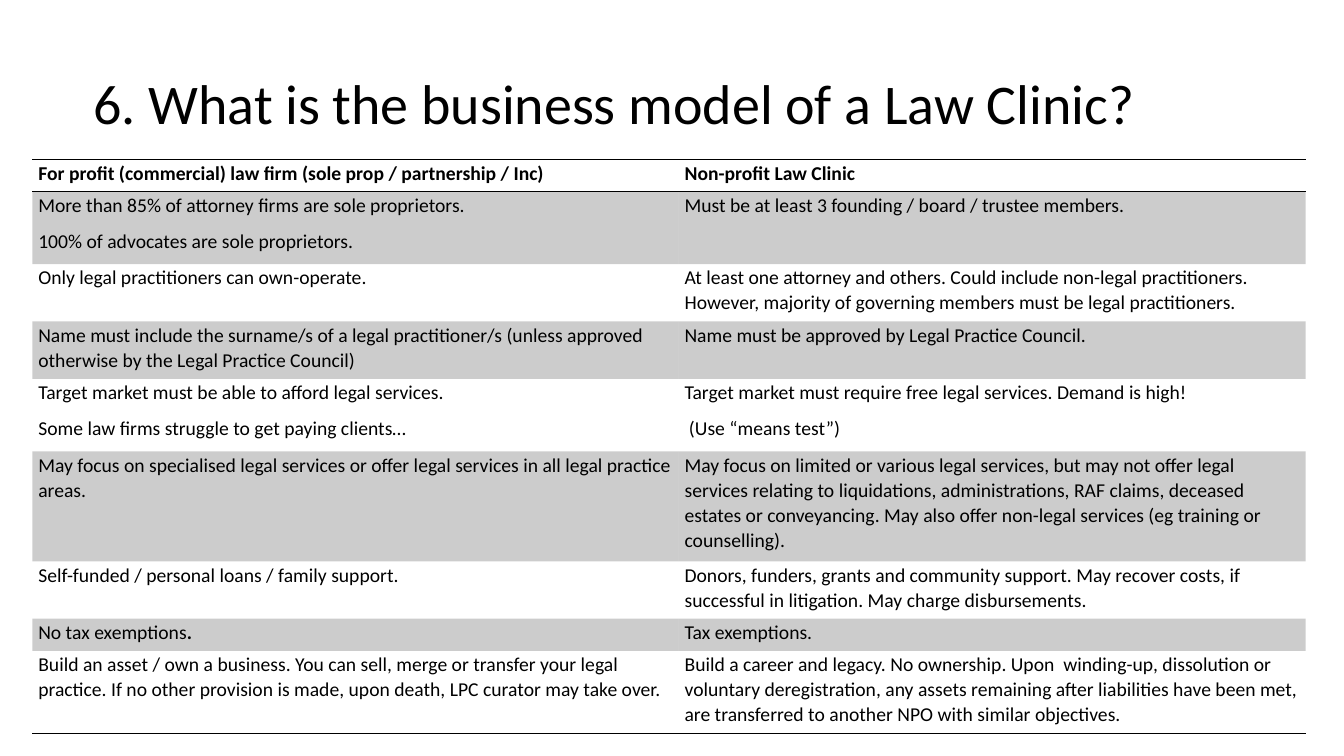
from pptx import Presentation
from pptx import util as u
from pptx.dml.color import RGBColor
from pptx.enum import shapes, text
from pptx.oxml import parse_xml
from pptx.oxml.ns import nsdecls, qn

PX = 9144
BLACK = RGBColor(0x00, 0x00, 0x00)
WHITE = RGBColor(0xFF, 0xFF, 0xFF)
FONT = "Calibri"
NO_GRID_STYLE = "{2D5ABB26-0587-4C30-8999-92F81FD0307C}"
BAND_ALPHA = 20

TITLE = "6. What is the business model of a Law Clinic?"
COLUMN_WIDTHS = (641, 622)
ROW_HEIGHTS = (32, 72, 57, 57, 72, 109, 57, 32, 82)
ROWS = [
    (["For profit (commercial) law firm (sole prop / partnership / Inc)"],
     ["Non-profit Law Clinic"]),
    (["More than 85% of attorney firms are sole proprietors.",
      "100% of advocates are sole proprietors."],
     ["Must be at least 3 founding / board / trustee members."]),
    (["Only legal practitioners can own-operate."],
     ["At least one attorney and others. Could include non-legal practitioners. "
      "However, majority of governing members must be legal practitioners."]),
    (["Name must include the surname/s of a legal practitioner/s (unless approved "
      "otherwise by the Legal Practice Council)"],
     ["Name must be approved by Legal Practice Council."]),
    (["Target market must be able to afford legal services.",
      "Some law firms struggle to get paying clients…"],
     ["Target market must require free legal services. Demand is high!",
      " (Use “means test”)"]),
    (["May focus on specialised legal services or offer legal services in all legal "
      "practice areas."],
     ["May focus on limited or various legal services, but may not offer legal services "
      "relating to liquidations, administrations, RAF claims, deceased estates or "
      "conveyancing. May also offer non-legal services (eg training or counselling)."]),
    (["Self-funded / personal loans / family support."],
     ["Donors, funders, grants and community support. May recover costs, if successful "
      "in litigation. May charge disbursements."]),
    (["No tax exemptions|."],
     ["Tax exemptions."]),
    (["Build an asset / own a business. You can sell, merge or transfer your legal "
      "practice. If no other provision is made, upon death, LPC curator may take over."],
     ["Build a career and legacy. No ownership. Upon  winding-up, dissolution or "
      "voluntary deregistration, any assets remaining after liabilities have been met, "
      "are transferred to another NPO with similar objectives."]),
]


def box(x, y, w, h):
    return [v * PX for v in (x, y, w, h)]


def set_font(p, size, bold=False):
    p.font.name = FONT
    p.font.size = u.Pt(size)
    p.font.bold = bold
    p.font.color.rgb = BLACK


def add_panel(s, x, y, w, h):
    sp = s.shapes.add_shape(shapes.MSO_SHAPE.RECTANGLE, *box(x, y, w, h))
    sp.shadow.inherit = False
    sp.fill.solid()
    sp.fill.fore_color.rgb = WHITE
    sp.line.fill.background()


def add_title(s, x, y, w, h):
    tf = s.shapes.add_textbox(*box(x, y, w, h)).text_frame
    tf.word_wrap = True
    tf.vertical_anchor = text.MSO_ANCHOR.MIDDLE
    p = tf.paragraphs[0]
    p.text = TITLE
    p.line_spacing = 0.9
    set_font(p, 40)


def add_border(cell, side):
    cell._tc.get_or_add_tcPr().append(parse_xml(
        f'<a:{side} {nsdecls("a")} w="{u.Pt(1)}"><a:solidFill>'
        f'<a:srgbClr val="{BLACK}"/></a:solidFill></a:{side}>'))


def shade(cell):
    cell.fill.solid()
    cell.fill.fore_color.rgb = BLACK
    color = cell._tc.tcPr.find(qn("a:solidFill")).find(qn("a:srgbClr"))
    color.append(parse_xml(f'<a:alpha {nsdecls("a")} val="{BAND_ALPHA * 1000}"/>'))


def write_cell(cell, lines, bold):
    cell.margin_left = cell.margin_right = 6 * PX
    cell.margin_top, cell.margin_bottom = PX, 0
    tf = cell.text_frame
    for i, line in enumerate(lines):
        p = tf.add_paragraph() if i else tf.paragraphs[0]
        p.line_spacing = 1.05
        p.space_after = u.Pt(8)
        set_font(p, 14, bold)
        for j, part in enumerate(line.split("|")):
            r = p.add_run()
            r.text = part
            if j:
                r.font.bold = True


def add_comparison(s, x, y):
    frame = s.shapes.add_table(len(ROWS), len(COLUMN_WIDTHS),
                               *box(x, y, sum(COLUMN_WIDTHS), sum(ROW_HEIGHTS)))
    table = frame.table
    table.horz_banding = False
    table._tbl.tblPr.find(qn("a:tableStyleId")).text = NO_GRID_STYLE
    for column, width in zip(table.columns, COLUMN_WIDTHS):
        column.width = width * PX
    for i, (height, row) in enumerate(zip(ROW_HEIGHTS, ROWS)):
        table.rows[i].height = height * PX
        for j, lines in enumerate(row):
            cell = table.cell(i, j)
            write_cell(cell, lines, bold=i == 0)
            if i == 0:
                add_border(cell, "lnT")
            if i in (0, len(ROWS) - 1):
                add_border(cell, "lnB")
            if i % 2:
                shade(cell)
            else:
                cell.fill.background()


def main():
    prs = Presentation()
    prs.slide_width, prs.slide_height = 1333 * PX, 750 * PX
    s = prs.slides.add_slide(prs.slide_layouts[6])
    add_panel(s, 0, 0, 1333, 307)
    add_title(s, 83, -11, 1158, 232)
    add_comparison(s, 32, 158)
    prs.save("out.pptx")


if __name__ == "__main__":
    main()
